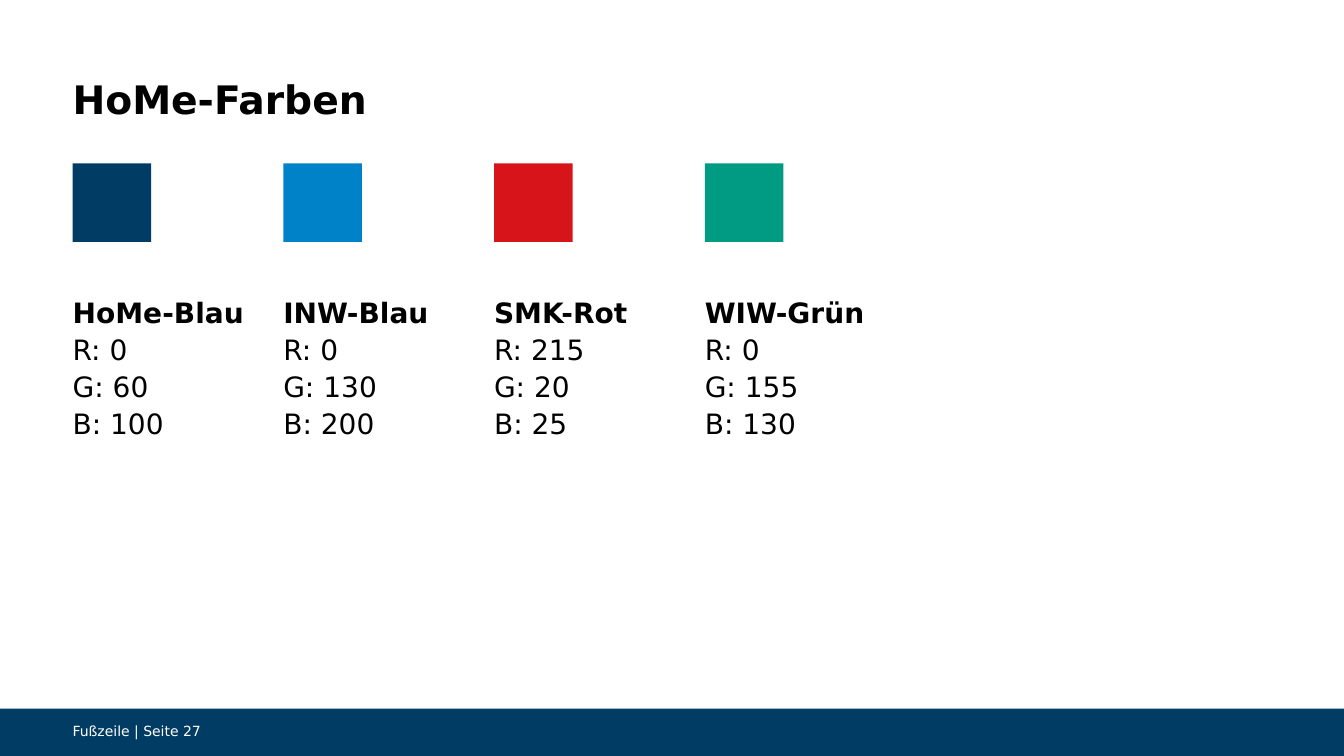
from pptx import Presentation
from pptx.dml.color import RGBColor
from pptx.enum.shapes import MSO_SHAPE as Shape
from pptx.enum.text import MSO_ANCHOR as Anchor, MSO_AUTO_SIZE as AutoSize, PP_ALIGN as Align
from pptx.util import Inches, Pt

FONT = "DejaVu Sans"
HOME_BLUE = "003C64"
MARGIN = 0.72
COLUMN_PITCH = 2.09
SWATCHES = [
    ("HoMe-Blau", HOME_BLUE),
    ("INW-Blau", "0082C8"),
    ("SMK-Rot", "D71419"),
    ("WIW-Grün", "009B82"),
]


def color(value):
    return RGBColor.from_string(value)


def add_block(page, left, top, width, height, fill):
    block = page.shapes.add_shape(
        Shape.RECTANGLE, Inches(left), Inches(top), Inches(width), Inches(height))
    block.shadow.inherit = False
    block.fill.solid()
    block.fill.fore_color.rgb = color(fill)
    block.line.fill.background()


def fill_text(box, lines, size, ink="000000", bold_first=True, spacing=None):
    frame = box.text_frame
    frame.word_wrap = True
    frame.auto_size = AutoSize.NONE
    frame.vertical_anchor = Anchor.TOP
    frame.margin_left = frame.margin_right = frame.margin_top = frame.margin_bottom = 0
    frame.text = "\n".join(lines)
    for index, para in enumerate(frame.paragraphs):
        para.alignment = Align.LEFT
        para.line_spacing = spacing
        for span in para.runs:
            span.font.name = FONT
            span.font.size = Pt(size)
            span.font.bold = bold_first and index == 0
            span.font.color.rgb = color(ink)


def add_text(page, left, top, width, height, lines, size, **style):
    box = page.shapes.add_textbox(
        Inches(left), Inches(top), Inches(width), Inches(height))
    fill_text(box, lines, size, **style)


def add_footer(page, left, top, width, height):
    add_block(page, left, top, width, height, HOME_BLUE)
    add_text(page, left + MARGIN, top + 0.14, 8.35, 0.17, ["Fußzeile | Seite 27"], 10,
             ink="FFFFFF", bold_first=False)


def add_title(page, left, top, width, height):
    title = page.shapes.title
    title.left, title.top = Inches(left), Inches(top)
    title.width, title.height = Inches(width), Inches(height)
    fill_text(title, ["HoMe-Farben"], 28, spacing=Pt(38.4))


def add_swatch(page, left, top, width, name, value):
    add_block(page, left, top, 0.78, 0.78, value)
    channels = [f"{letter}: {level}" for letter, level in zip("RGB", color(value))]
    add_text(page, left, top + 1.28, width, 3.45, [name] + channels, 20, spacing=1.1)


def main():
    deck = Presentation()
    deck.slide_width, deck.slide_height = Inches(13.33), Inches(7.5)
    page = deck.slides.add_slide(deck.slide_layouts[5])
    add_footer(page, 0, 7.03, 13.33, 0.47)
    add_title(page, MARGIN, 0.68, 11.89, 0.94)
    for column, (name, value) in enumerate(SWATCHES):
        add_swatch(page, MARGIN + column * COLUMN_PITCH, 1.62, COLUMN_PITCH, name, value)
    deck.save("out.pptx")


if __name__ == "__main__":
    main()
